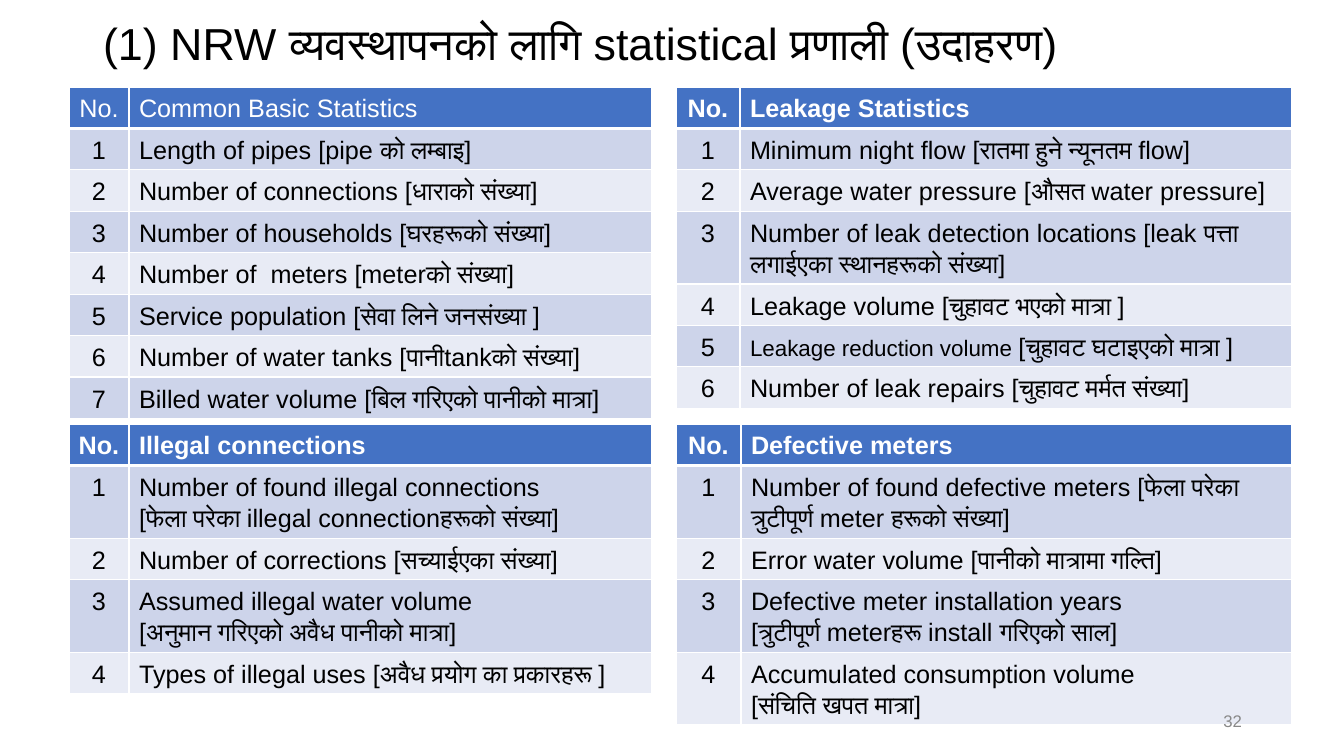
"""Build the slide of example statistics for managing non-revenue water."""
from dataclasses import dataclass

from lxml import etree
from pptx import Presentation
from pptx import util as u
from pptx.dml.color import RGBColor
from pptx.enum import text
from pptx.oxml import ns

TITLE = "(1) NRW व्यवस्थापनको लागि statistical प्रणाली (उदाहरण)"
PAGE_NUMBER = "32"
BASIC = [
    "Length of pipes [pipe को लम्बाइ]",
    "Number of connections [धाराको संख्या]",
    "Number of households [घरहरूको संख्या]",
    "Number of  meters [meterको संख्या]",
    "Service population [सेवा लिने जनसंख्या ]",
    "Number of water tanks [पानीtankको संख्या]",
    "Billed water volume [बिल गरिएको पानीको मात्रा]",
]
ILLEGAL = [
    "Number of found illegal connections\n[फेला परेका illegal connectionहरूको संख्या]",
    "Number of corrections [सच्याईएका संख्या]",
    "Assumed illegal water volume\n[अनुमान गरिएको अवैध पानीको मात्रा]",
    "Types of illegal uses [अवैध प्रयोग का प्रकारहरू ]",
]
DEFECTIVE = [
    "Number of found defective meters [फेला परेका त्रुटीपूर्ण meter हरूको संख्या]",
    "Error water volume [पानीको मात्रामा गल्ति]",
    "Defective meter installation years\n[त्रुटीपूर्ण meterहरू install गरिएको साल]",
    "Accumulated consumption volume\n[संचिति खपत मात्रा]",
]
LEAKAGE = [
    "Minimum night flow [रातमा हुने न्यूनतम flow]",
    "Average water pressure [औसत water pressure]",
    "Number of leak detection locations [leak पत्ता लगाईएका स्थानहरूको संख्या]",
    "Leakage volume [चुहावट भएको मात्रा ]",
    (("Leakage reduction volume ", 16), ("[चुहावट घटाइएको मात्रा ]", 18)),
    "Number of leak repairs [चुहावट मर्मत संख्या]",
]
LEFT, RIGHT, UPPER, LOWER = 69, 676, 87, 424
TABLES = [
    dict(heading="Common Basic Statistics", items=BASIC, at=(LEFT, UPPER), widths=(60, 523), bold=False),
    dict(heading="Illegal connections", items=ILLEGAL, at=(LEFT, LOWER), widths=(60, 523), number_margin=0),
    dict(heading="Defective meters", items=DEFECTIVE, at=(RIGHT, LOWER), widths=(65, 551)),
    dict(heading="Leakage Statistics", items=LEAKAGE, at=(RIGHT, UPPER), widths=(64, 552)),
]
ROW_HEIGHT = 41


@dataclass(frozen=True)
class Theme:
    font: str = "Arial"
    ink: str = "000000"
    white: str = "FFFFFF"
    header: str = "4472C4"
    bands: tuple = ("CDD4EA", "E8EBF5")
    muted: str = "888888"
    title: int = 32
    body: int = 18
    small: int = 12


THEME = Theme()


def px(length):
    return u.Emu(round(length * 914400 / 100.8))


def write(frame, content, size=THEME.body, color=THEME.ink, bold=False,
          align=text.PP_ALIGN.LEFT, spacing=1.0):
    lines = [[(line, size)] for line in content.split("\n")] if isinstance(content, str) else [content]
    frame.word_wrap = True
    for index, line in enumerate(lines):
        para = frame.add_paragraph() if index else frame.paragraphs[0]
        para.alignment = align
        para.line_spacing = spacing
        for words, points in line:
            span = para.add_run()
            span.text = words
            span.font.name = THEME.font
            span.font.size = u.Pt(points)
            span.font.bold = bold
            span.font.color.rgb = RGBColor.from_string(color)


def add_borders(cell, is_header):
    properties = cell._tc.get_or_add_tcPr()
    for side in "LRTB":
        points = 3 if is_header and side == "B" else 1
        line = etree.SubElement(properties, ns.qn(f"a:ln{side}"), w=str(u.Pt(points)))
        fill = etree.SubElement(line, ns.qn("a:solidFill"))
        etree.SubElement(fill, ns.qn("a:srgbClr"), val=THEME.white)


def add_statistics(page, heading, items, at, widths, bold=True, number_margin=None):
    rows = [("No.", heading)] + [(str(number), item) for number, item in enumerate(items, 1)]
    table = page.shapes.add_table(len(rows), 2, px(at[0]), px(at[1]),
                                  px(sum(widths)), px(ROW_HEIGHT * len(rows))).table
    for column, width in zip(table.columns, widths):
        column.width = px(width)
    for row_index, row in enumerate(rows):
        is_header = row_index == 0
        table.rows[row_index].height = px(ROW_HEIGHT)
        for column_index, content in enumerate(row):
            cell = table.cell(row_index, column_index)
            add_borders(cell, is_header)
            cell.fill.solid()
            shade = THEME.header if is_header else THEME.bands[(row_index - 1) % 2]
            cell.fill.fore_color.rgb = RGBColor.from_string(shade)
            write(cell.text_frame, content, spacing=1.11, bold=bold and is_header,
                  color=THEME.white if is_header else THEME.ink,
                  align=text.PP_ALIGN.LEFT if column_index else text.PP_ALIGN.CENTER)
    if number_margin is not None:
        corner = table.cell(0, 0)
        corner.margin_left = corner.margin_right = px(number_margin)


def place(box, left, top, width, height):
    box.left, box.top, box.width, box.height = map(px, (left, top, width, height))
    box.text_frame.auto_size = text.MSO_AUTO_SIZE.NONE
    box.text_frame.vertical_anchor = text.MSO_ANCHOR.MIDDLE


def main():
    deck = Presentation()
    deck.slide_width, deck.slide_height = px(1344), px(756)
    page = deck.slides.add_slide(deck.slide_layouts[5])
    title = page.shapes.title
    place(title, 93, 7, 1159, 77)
    write(title.text_frame, TITLE, size=THEME.title, spacing=0.9)
    for table in TABLES:
        add_statistics(page, **table)
    number = page.shapes.add_textbox(0, 0, 0, 0)
    place(number, 950, 701, 302, 40)
    write(number.text_frame, PAGE_NUMBER, size=THEME.small, color=THEME.muted, align=text.PP_ALIGN.RIGHT)
    deck.save("out.pptx")


if __name__ == "__main__":
    main()
